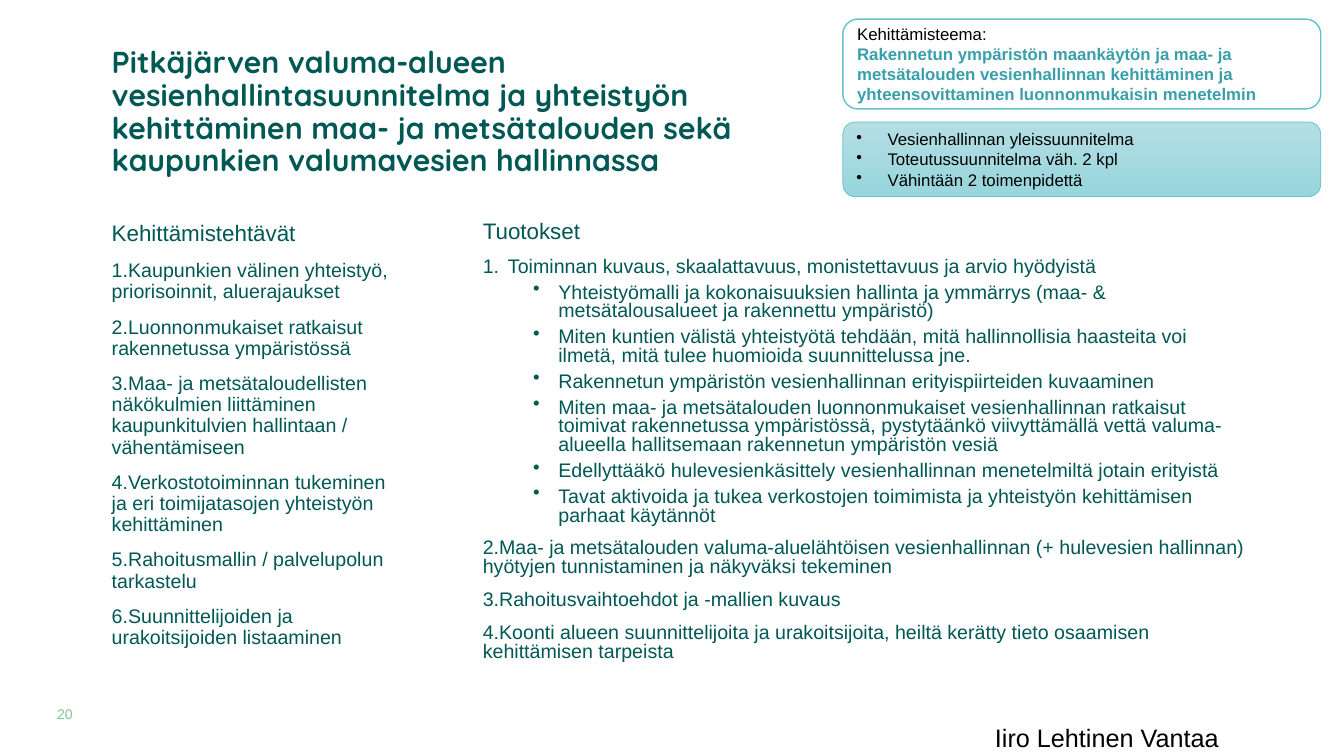
from lxml import etree
from pptx import Presentation, util as u
from pptx.dml.color import RGBColor
from pptx.enum import shapes, text
from pptx.oxml.ns import qn

COLORS = {
    "heading": "005854", "number": "84C497", "theme": "399FAA", "border": "64C1CB",
    "black": "000000", "white": "FFFFFF", "light": "B4DEE4", "dark": "97D5DC",
}

TITLE = ("Pitkäjärven valuma-alueen vesienhallintasuunnitelma ja yhteistyön kehittäminen "
         "maa- ja metsätalouden sekä kaupunkien valumavesien hallinnassa")
TASKS = [
    "Kaupunkien välinen yhteistyö, priorisoinnit, aluerajaukset",
    "Luonnonmukaiset ratkaisut rakennetussa ympäristössä",
    "Maa- ja metsätaloudellisten näkökulmien liittäminen kaupunkitulvien hallintaan / "
    "vähentämiseen",
    "Verkostotoiminnan tukeminen ja eri toimijatasojen yhteistyön kehittäminen",
    "Rahoitusmallin / palvelupolun tarkastelu",
    "Suunnittelijoiden ja urakoitsijoiden listaaminen",
]
FIRST_OUTPUT = "Toiminnan kuvaus, skaalattavuus, monistettavuus ja arvio hyödyistä"
OUTPUT_DETAILS = [
    "Yhteistyömalli ja kokonaisuuksien hallinta ja ymmärrys (maa- & metsätalousalueet ja "
    "rakennettu ympäristö)",
    "Miten kuntien välistä yhteistyötä tehdään, mitä hallinnollisia haasteita voi ilmetä, "
    "mitä tulee huomioida suunnittelussa jne.",
    "Rakennetun ympäristön vesienhallinnan erityispiirteiden kuvaaminen",
    "Miten maa- ja metsätalouden luonnonmukaiset vesienhallinnan ratkaisut toimivat "
    "rakennetussa ympäristössä, pystytäänkö viivyttämällä vettä valuma-alueella "
    "hallitsemaan rakennetun ympäristön vesiä",
    "Edellyttääkö hulevesienkäsittely vesienhallinnan menetelmiltä jotain erityistä",
    "Tavat aktivoida ja tukea verkostojen toimimista ja yhteistyön kehittämisen parhaat "
    "käytännöt",
]
OTHER_OUTPUTS = [
    "Maa- ja metsätalouden valuma-aluelähtöisen vesienhallinnan (+ hulevesien hallinnan) "
    "hyötyjen tunnistaminen ja näkyväksi tekeminen",
    "Rahoitusvaihtoehdot ja -mallien kuvaus",
    "Koonti alueen suunnittelijoita ja urakoitsijoita, heiltä kerätty tieto osaamisen "
    "kehittämisen tarpeista",
]
THEME = ("Rakennetun ympäristön maankäytön ja maa- ja metsätalouden vesienhallinnan "
         "kehittäminen ja yhteensovittaminen luonnonmukaisin menetelmin")
GOALS = ["Vesienhallinnan yleissuunnitelma", "Toteutussuunnitelma väh. 2 kpl",
         "Vähintään 2 toimenpidettä"]


def rgb(name):
    """Return the named colour."""
    return RGBColor.from_string(COLORS[name])


def add_box(page, left, top, width, height, anchor=text.MSO_ANCHOR.TOP):
    """Add a wrapping text box and return its text frame."""
    box = page.shapes.add_textbox(*map(u.Inches, (left, top, width, height)))
    box.text_frame.word_wrap = True
    box.text_frame.vertical_anchor = anchor
    return box.text_frame


def add_card(page, top, height, line_width):
    """Add a rounded card in the right-hand corner."""
    card = page.shapes.add_shape(
        shapes.MSO_SHAPE.ROUNDED_RECTANGLE,
        *map(u.Inches, (8.36, top, 4.74, height)))
    card.shadow.inherit = False
    card.line.color.rgb = rgb("border")
    card.line.width = u.Pt(line_width)
    card.text_frame.word_wrap = True
    card.text_frame.vertical_anchor = text.MSO_ANCHOR.MIDDLE
    return card


def add_para(frame, words, size, color, font="Arial", bold=False, spacing=1.0, before=0):
    """Write the next left-aligned paragraph of a frame."""
    para = frame.paragraphs[0]
    if para.runs:
        para = frame.add_paragraph()
    para.add_run().text = words
    para.alignment = text.PP_ALIGN.LEFT
    para.line_spacing = spacing
    para.space_before = u.Pt(before)
    para.font.size = u.Pt(size)
    para.font.name = font
    para.font.bold = bold
    para.font.color.rgb = rgb(color)
    return para


def add_marker(para, tag, indent=0, hanging=0, **attributes):
    """Give a paragraph a bullet or number and a hanging indent."""
    props = para._p.get_or_add_pPr()
    props.set("marL", str(u.Inches(indent)))
    props.set("indent", str(-u.Inches(hanging)))
    marker = etree.Element(qn(tag), attributes)
    props.insert_element_before(marker, "a:tabLst", "a:defRPr", "a:extLst")


def add_bullet(para, indent, hanging):
    """Give a paragraph a round bullet."""
    add_marker(para, "a:buChar", indent, hanging, char="•")


def add_number(para, indent=0):
    """Give a paragraph an automatic number."""
    add_marker(para, "a:buAutoNum", indent, indent, type="arabicPeriod")


def add_column(page, left, width, heading, spacing):
    """Add a headed column and return a function that writes its items."""
    frame = add_box(page, left, 2.16, width, 4.47)
    add_para(frame, heading, 16, "heading", spacing=spacing, before=10)

    def add_item(words, before=10):
        """Write one item of the column."""
        return add_para(frame, words, 14, "heading", spacing=spacing, before=before)
    return add_item


def add_columns(page):
    """Add the columns of tasks and outputs."""
    add_task = add_column(page, 1.01, 3.01, "Kehittämistehtävät", 0.9)
    for words in TASKS:
        add_number(add_task(words))

    add_output = add_column(page, 4.69, 7.76, "Tuotokset", 0.8)
    add_number(add_output(FIRST_OUTPUT), 0.25)
    for words in OUTPUT_DETAILS:
        para = add_output(words, before=5)
        para.level = 1
        add_bullet(para, 0.75, 0.25)
    for words in OTHER_OUTPUTS:
        add_number(add_output(words))


def add_cards(page):
    """Add the theme card and the goals card."""
    theme = add_card(page, 0.19, 0.89, 1)
    theme.fill.solid()
    theme.fill.fore_color.rgb = rgb("white")
    add_para(theme.text_frame, "Kehittämisteema:", 12, "black")
    add_para(theme.text_frame, THEME, 12, "theme", bold=True)

    goals = add_card(page, 1.21, 0.74, 0.5)
    goals.fill.gradient()
    goals.fill.gradient_angle = 270
    for stop, color in zip(goals.fill.gradient_stops, ("light", "dark")):
        stop.color.rgb = rgb(color)
    for words in GOALS:
        add_bullet(add_para(goals.text_frame, words, 12, "black"), 0.31, 0.31)


def main():
    """Build and save the slide."""
    deck = Presentation()
    deck.slide_width, deck.slide_height = u.Inches(13.33), u.Inches(7.5)
    page = deck.slides.add_slide(deck.slide_layouts[6])

    number = add_box(page, 0.07, 6.97, 0.65, 0.2, text.MSO_ANCHOR.BOTTOM)
    number.margin_left = number.margin_right = number.margin_top = number.margin_bottom = 0
    add_para(number, "20", 10, "number").alignment = text.PP_ALIGN.RIGHT

    title = add_box(page, 1.01, 0.51, 6.79, 1.22, text.MSO_ANCHOR.MIDDLE)
    add_para(title, TITLE, 21.6, "heading", "Quicksand", bold=True, spacing=0.9)
    add_columns(page)
    add_cards(page)
    add_para(add_box(page, 9.77, 7.12, 3, 0.4), "Iiro Lehtinen Vantaa", 18, "black")
    deck.save("out.pptx")


if __name__ == "__main__":
    main()
